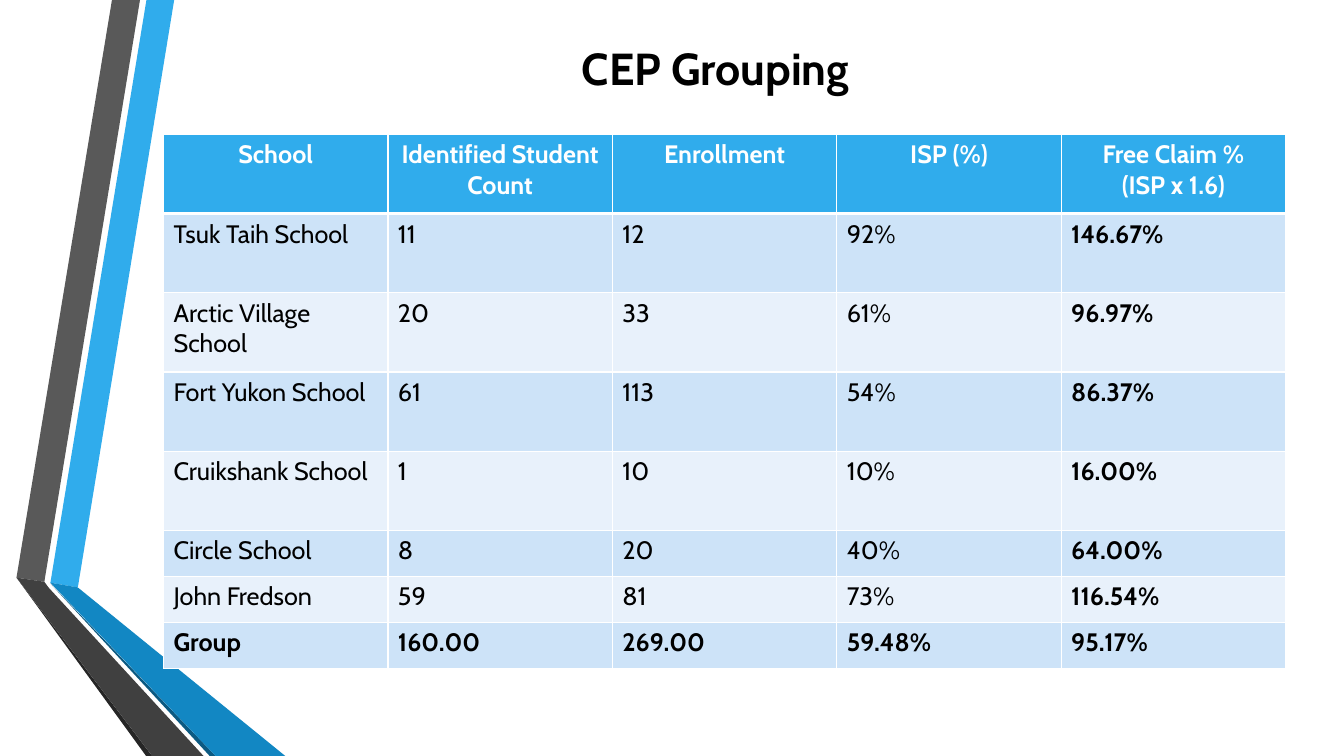
"""Build the CEP Grouping slide with its school table."""
import pptx
import pptx.util
import pptx.dml.color
import pptx.enum.text
import pptx.oxml
import pptx.oxml.ns

Pt = pptx.util.Pt
RGB = pptx.dml.color.RGBColor.from_string
ALIGN = pptx.enum.text.PP_ALIGN
ANCHOR = pptx.enum.text.MSO_ANCHOR
C = {"blue": "30ACEC", "gray": "595959", "black": "262626", "navy": "0C5A82",
     "deep": "1287C3", "charcoal": "404040", "dark_band": "CDE3F8",
     "light_band": "E8F1FB", "text": "000000", "white": "FFFFFF"}


def write(tf, text, align, color, size, bold):
    tf.text = text
    for p in tf.paragraphs:
        p.alignment = align
        font = p.runs[0].font
        for key, value in {"name": "Cabin", "size": Pt(size), "bold": bold}.items():
            setattr(font, key, value)
        font.color.rgb = RGB(C[color])


def add_borders(cell, widths):
    tcPr = cell._tc.get_or_add_tcPr()
    for i, (side, width) in enumerate(widths.items()):
        tcPr.insert(i, pptx.oxml.parse_xml(
            f'<a:ln{side} {pptx.oxml.ns.nsdecls("a")} w="{Pt(width)}"><a:solidFill>'
            f'<a:srgbClr val="{C["white"]}"/></a:solidFill></a:ln{side}>'))


prs = pptx.Presentation()
prs.slide_width, prs.slide_height = Pt(960), Pt(540)
s = prs.slides.add_slide(prs.slide_layouts[5])

ribbons = [
    ("blue", [(36, 416.2), (55.6, 419.6), (124.4, 0), (104.6, 0)]),
    ("gray", [(100, 0), (80, 0), (11.8, 412.6), (31.7, 415.6)]),
    ("black", [(11.8, 412.6), (104.4, 540), (108.7, 540)]),
    ("navy", [(36, 416.8), (149.8, 540), (154.1, 540)]),
    ("deep", [(36, 416.2), (154.1, 540), (203.8, 540), (55.6, 419.6)]),
    ("charcoal", [(145.4, 540), (34.6, 419.6), (31.7, 415.6), (11.8, 412.6), (108.7, 540)]),
]
for color, points in ribbons:
    corners = [(Pt(x), Pt(y)) for x, y in points]
    builder = s.shapes.build_freeform(*corners[0])
    builder.add_line_segments(corners[1:], close=True)
    sp = builder.convert_to_shape()
    sp.shadow.inherit = False
    sp.fill.solid()
    sp.fill.fore_color.rgb = RGB(C[color])
    sp.line.fill.background()

title = s.shapes.title
for key, value in {"left": 116.6, "top": 15.1, "width": 789.1, "height": 56.2}.items():
    setattr(title, key, Pt(value))
title.text_frame.vertical_anchor = ANCHOR.BOTTOM
write(title.text_frame, "CEP Grouping", ALIGN.CENTER, "text", 32, True)

rows = [
    ["School", "Identified Student Count", "Enrollment", "ISP (%)", "Free Claim %\n(ISP x 1.6)"],
    ["Tsuk Taih School", "11", "12", "92%", "146.67%"],
    ["Arctic Village School", "20", "33", "61%", "96.97%"],
    ["Fort Yukon School", "61", "113", "54%", "86.37%"],
    ["Cruikshank School", "1", "10", "10%", "16.00%"],
    ["Circle School", "8", "20", "40%", "64.00%"],
    ["John Fredson", "59", "81", "73%", "116.54%"],
    ["Group", "160.00", "269.00", "59.48%", "95.17%"],
]
heights = [56.6] * 5 + [32.9] * 3
table = s.shapes.add_table(len(rows), len(rows[0]), Pt(116.8), Pt(96),
                           Pt(801.5), Pt(sum(heights))).table
for column in table.columns:
    column.width = Pt(160.3)
for i, (values, height) in enumerate(zip(rows, heights)):
    table.rows[i].height = Pt(height)
    header, total = i == 0, i == len(rows) - 1
    band = "blue" if header else "dark_band" if i % 2 else "light_band"
    for j, value in enumerate(values):
        cell = table.cell(i, j)
        cell.fill.solid()
        cell.fill.fore_color.rgb = RGB(C[band])
        add_borders(cell, {"L": 1, "R": 1, "T": 3 if i == 1 else 1, "B": 3 if header else 1})
        write(cell.text_frame, value, ALIGN.CENTER if header else ALIGN.LEFT,
              "white" if header else "text", 18, header or total or j == len(values) - 1)

prs.save("out.pptx")
